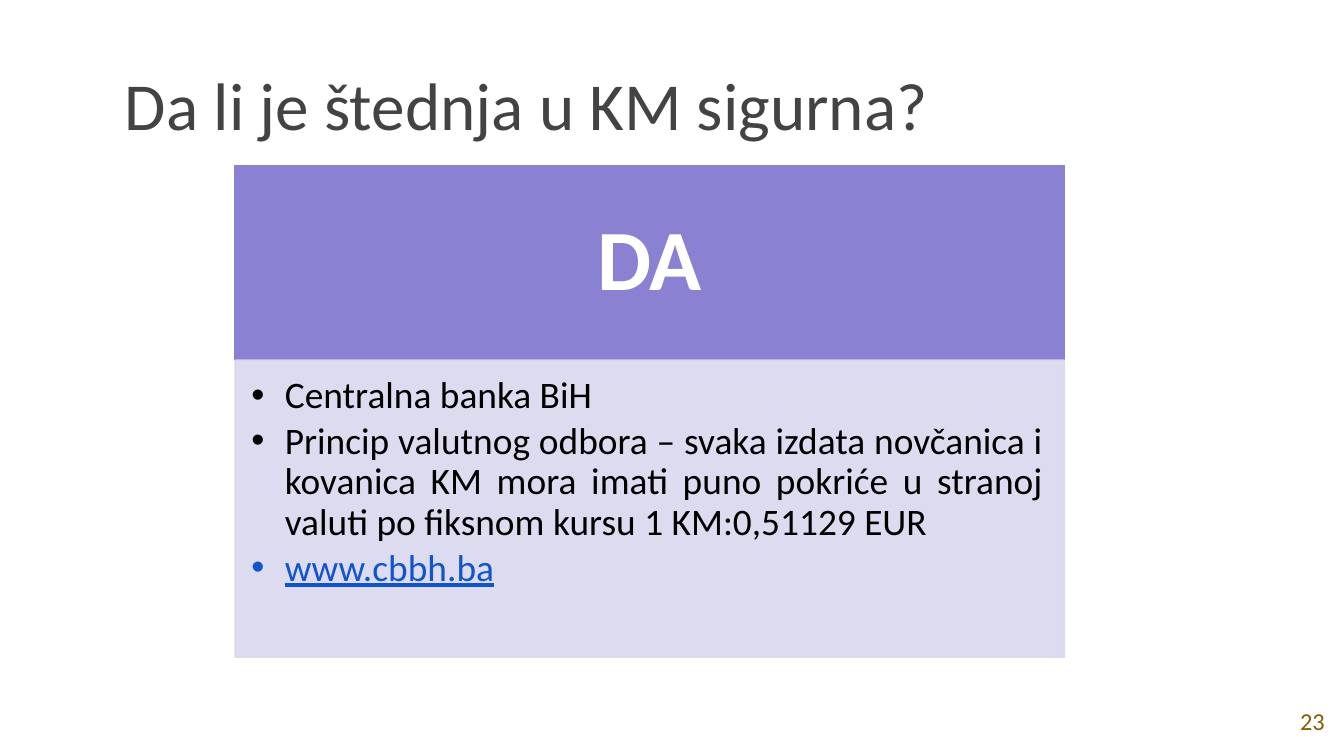
from pptx import Presentation
from pptx.dml.color import RGBColor
from pptx.enum import shapes, text
from pptx.oxml.ns import qn
from pptx.util import Inches, Pt
from lxml import etree

GREY = RGBColor(0x43, 0x43, 0x43)
BROWN = RGBColor(0x7F, 0x60, 0x00)
PURPLE = RGBColor(0x8B, 0x81, 0xD2)
PALE = RGBColor(0xDA, 0xD8, 0xEE)
BLUE = RGBColor(0x11, 0x55, 0xCC)
WHITE = RGBColor(0xFF, 0xFF, 0xFF)
BLACK = RGBColor(0, 0, 0)


def setup(frame, anchor, left, top, right, bottom):
    frame.word_wrap = True
    frame.auto_size = text.MSO_AUTO_SIZE.NONE
    frame.vertical_anchor = anchor
    frame.margin_left, frame.margin_top = Inches(left), Inches(top)
    frame.margin_right, frame.margin_bottom = Inches(right), Inches(bottom)


def style(para, size, color, align, bold=False):
    para.alignment = align
    for run in para.runs:
        run.font.name = "Calibri"
        run.font.size = Pt(size)
        run.font.bold = bold
        run.font.color.rgb = color


deck = Presentation()
deck.slide_width = Inches(10)
deck.slide_height = Inches(10) * 9 // 16
slide = deck.slides.add_slide(deck.slide_layouts[5])
mid, top, low = text.MSO_ANCHOR.MIDDLE, text.MSO_ANCHOR.TOP, text.MSO_ANCHOR.BOTTOM
left, center, just = text.PP_ALIGN.LEFT, text.PP_ALIGN.CENTER, text.PP_ALIGN.JUSTIFY

title = slide.shapes.title
title.left, title.top = Inches(0.83), Inches(0.23)
title.width, title.height = Inches(7.17), Inches(0.94)
title.text_frame.text = "Da li je štednja u KM sigurna?"
setup(title.text_frame, low, 0.1, 0.1, 0.1, 0.1)
style(title.text_frame.paragraphs[0], 36, GREY, left)

number = slide.shapes.add_textbox(Inches(9.53), Inches(5.11), Inches(0.47), Inches(0.51))
number.text_frame.text = "23"
setup(number.text_frame, mid, 0.1, 0.1, 0.1, 0.1)
style(number.text_frame.paragraphs[0], 13, BROWN, center)

panels = []
for y, height, color in [(1.23, 1.45, PURPLE), (2.68, 2.21, PALE)]:
    panel = slide.shapes.add_shape(
        shapes.MSO_SHAPE.RECTANGLE, Inches(1.75), Inches(y), Inches(6.17), Inches(height))
    panel.shadow.inherit = False
    panel.fill.solid()
    panel.fill.fore_color.rgb = color
    panel.line.color.rgb = color
    panel.line.width = Pt(0.75)
    panels.append(panel)
head, body = panels

for tone in body._element.spPr.iter(qn("a:srgbClr")):
    etree.SubElement(tone, qn("a:alpha"), val="90000")

head.text_frame.text = "DA"
setup(head.text_frame, mid, 0.36, 0.2, 0.36, 0.2)
answer = head.text_frame.paragraphs[0]
answer.line_spacing = 0.9
style(answer, 46, WHITE, center, True)

points = [
    ("Centralna banka BiH", BLACK),
    ("Princip valutnog odbora – svaka izdata novčanica i kovanica KM mora imati "
     "puno pokriće u stranoj valuti po fiksnom kursu 1 KM:0,51129 EUR", BLACK),
    ("www.cbbh.ba", BLUE),
]
body.text_frame.text = "\n".join(words for words, color in points)
setup(body.text_frame, top, 0.12, 0.12, 0.16, 0.17)
for para, (words, color) in zip(body.text_frame.paragraphs, points):
    props = para._p.get_or_add_pPr()
    props.set("marL", str(Inches(0.25)))
    props.set("indent", str(-Inches(0.25)))
    etree.SubElement(props, qn("a:buFont"), typeface="Arial")
    etree.SubElement(props, qn("a:buChar"), char="•")
    para.line_spacing = 0.9
    para.space_after = Pt(3)
    style(para, 20, color, just)
    para.runs[0].font.underline = color == BLUE

deck.save("out.pptx")
